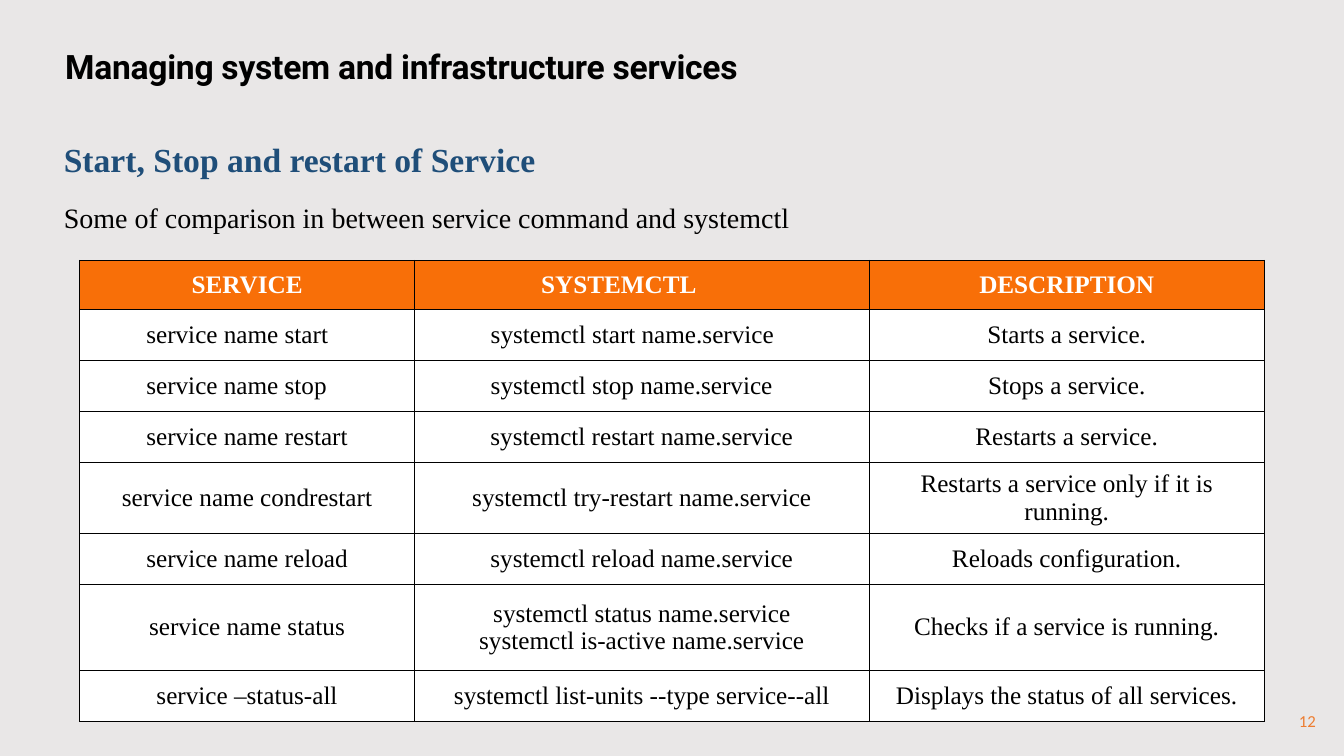
from lxml.etree import SubElement
from pptx import Presentation
from pptx.dml.color import RGBColor
from pptx.enum.text import MSO_ANCHOR, PP_ALIGN
from pptx.oxml.ns import qn
from pptx.util import Pt

TITLE = "Managing system and infrastructure services"
HEAD = "Start, Stop and restart of Service"
INTRO = "Some of comparison in between service command and systemctl"
PAGE = "12"
ROWS = [
    ("SERVICE", "SYSTEMCTL\t", "DESCRIPTION"),
    ("service name start\t", "systemctl start name.service\t", "Starts a service."),
    ("service name stop\t", "systemctl stop name.service\t", "Stops a service."),
    ("service name restart", "systemctl restart name.service", "Restarts a service."),
    ("service name condrestart", "systemctl try-restart name.service",
     "Restarts a service only if it is running."),
    ("service name reload", "systemctl reload name.service", "Reloads configuration."),
    ("service name status",
     "systemctl status name.service\nsystemctl is-active name.service",
     "Checks if a service is running."),
    ("service –status-all", "systemctl list-units --type service--all",
     "Displays the status of all services."),
]
WIDTHS = (239, 325, 282)
ROW = 36.5
HEIGHTS = {0: 35, 4: 50.5, 6: 61.5}
THEME = {
    "back": "E9E7E7", "ink": "000000", "white": "FFFFFF", "blue": "1F4E79",
    "fill": "F86F08", "page": "ED7D31",
    "serif": "Times New Roman", "sans": "Roboto", "plain": "Calibri",
    "big": 24, "mid": 20, "cell": 18, "small": 12,
}


def color(name):
    return RGBColor.from_string(THEME[name])


def write(text, frame, size="cell", font="serif", ink="ink", bold=False,
          align=PP_ALIGN.LEFT, track=0, after=0, more=False):
    for i, line in enumerate(text.split("\n")):
        para = frame.add_paragraph() if more or i else frame.paragraphs[0]
        para.alignment = align
        para.space_after = Pt(after)
        run = para.add_run()
        run.text = line
        run.font.size = Pt(THEME[size])
        run.font.name = THEME[font]
        run.font.bold = bold
        run.font.color.rgb = color(ink)
        if track:
            run.font._element.set("spc", str(track))


def box(slide, x, y, w, h, anchor=MSO_ANCHOR.TOP):
    frame = slide.shapes.add_textbox(Pt(x), Pt(y), Pt(w), Pt(h)).text_frame
    frame.word_wrap = True
    frame.vertical_anchor = anchor
    return frame


def border(cell):
    props = cell._tc.get_or_add_tcPr()
    for i, side in enumerate(("lnL", "lnR", "lnT", "lnB")):
        line = props.makeelement(qn(f"a:{side}"), {"w": str(Pt(1))})
        fill = SubElement(line, qn("a:solidFill"))
        SubElement(fill, qn("a:srgbClr"), val=THEME["ink"])
        props.insert(i, line)


def grid(slide, x, y):
    tall = [HEIGHTS.get(i, ROW) for i in range(len(ROWS))]
    table = slide.shapes.add_table(
        len(ROWS), len(WIDTHS), Pt(x), Pt(y), Pt(sum(WIDTHS)), Pt(sum(tall))).table
    table.horz_banding = False
    for col, width in zip(table.columns, WIDTHS):
        col.width = Pt(width)
    for i, texts in enumerate(ROWS):
        table.rows[i].height = Pt(tall[i])
        top = i == 0
        for j, text in enumerate(texts):
            cell = table.cell(i, j)
            cell.vertical_anchor = MSO_ANCHOR.MIDDLE
            cell.fill.solid()
            cell.fill.fore_color.rgb = color("fill" if top else "white")
            border(cell)
            write(text, cell.text_frame, ink="white" if top else "ink",
                  bold=top, align=PP_ALIGN.CENTER)


def main():
    deck = Presentation()
    deck.slide_width, deck.slide_height = Pt(960), Pt(540)
    slide = deck.slides.add_slide(deck.slide_layouts[6])
    slide.background.fill.solid()
    slide.background.fill.fore_color.rgb = color("back")

    write(PAGE, box(slide, 913, 500.5, 34, 29, MSO_ANCHOR.MIDDLE),
          size="small", font="plain", ink="page", align=PP_ALIGN.RIGHT)
    body = box(slide, 38.5, 96, 900, 73)
    write(HEAD, body, size="big", ink="blue", bold=True,
          align=PP_ALIGN.JUSTIFY, after=15)
    write(INTRO, body, size="mid", align=PP_ALIGN.JUSTIFY, more=True)
    grid(slide, 57, 186)
    write(TITLE, box(slide, 39.5, 29, 807, 36),
          size="big", font="sans", bold=True, track=-20)
    deck.save("out.pptx")


if __name__ == "__main__":
    main()
